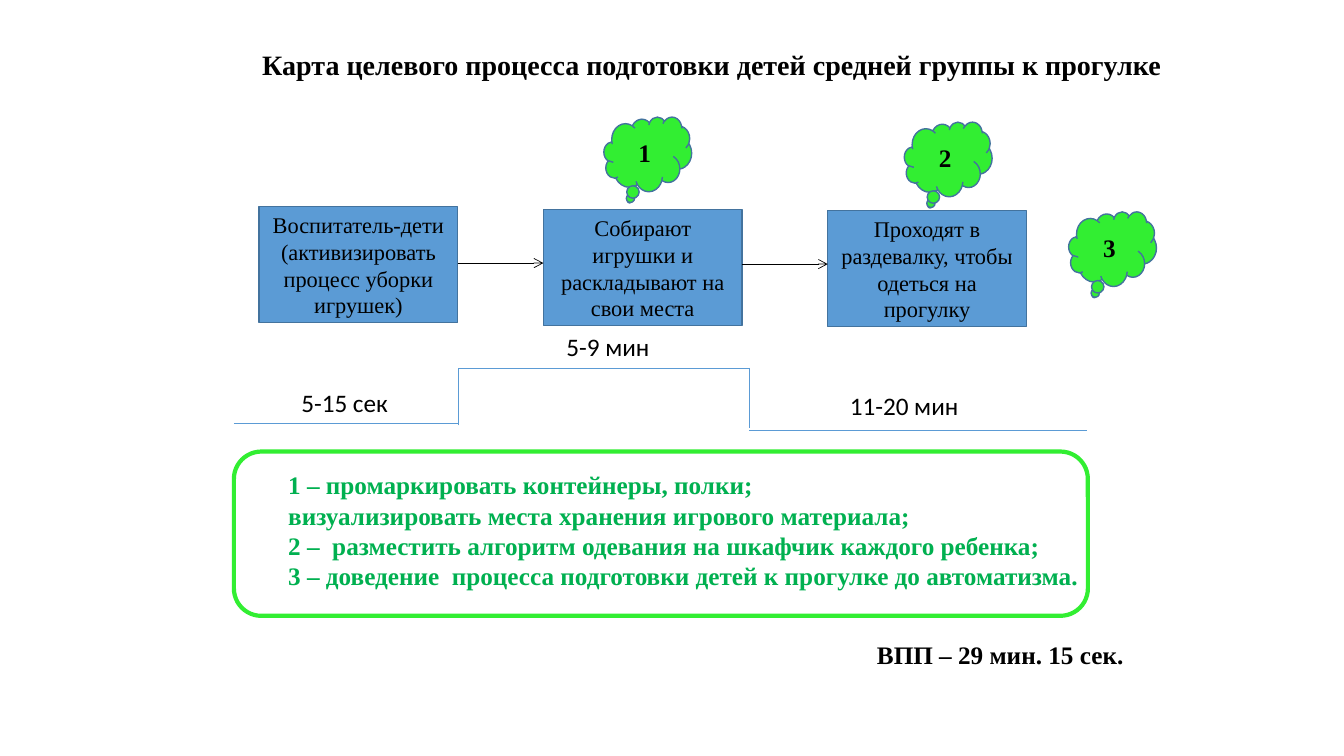
from lxml.etree import SubElement
from pptx import Presentation
from pptx.dml.color import RGBColor
from pptx.enum.shapes import MSO_CONNECTOR, MSO_SHAPE
from pptx.enum.text import MSO_ANCHOR, MSO_AUTO_SIZE, PP_ALIGN
from pptx.oxml.ns import qn
from pptx.util import Inches, Pt

SERIF = "Times New Roman"
BLACK, BLUE, DARK_BLUE = "000000", "5B9BD5", "43739E"
LIME, GREEN = "32EE32", "00B050"


def color(value):
    return RGBColor.from_string(value)


def write(shape, lines, size, font=SERIF, fill=BLACK, bold=False,
          align=PP_ALIGN.LEFT, anchor=MSO_ANCHOR.TOP, wrap=False):
    frame = shape.text_frame
    frame.auto_size = MSO_AUTO_SIZE.NONE
    frame.word_wrap = wrap
    frame.vertical_anchor = anchor
    for index, line in enumerate(lines):
        paragraph = frame.add_paragraph() if index else frame.paragraphs[0]
        paragraph.alignment = align
        run = paragraph.add_run()
        run.text = line
        run.font.name = font
        run.font.size = Pt(size)
        run.font.bold = bold
        run.font.color.rgb = color(fill)


def add_label(slide, box, lines, size=18, **style):
    shape = slide.shapes.add_textbox(*map(Inches, box))
    write(shape, lines, size, **style)


def add_outlined(slide, kind, box, fill, line, width):
    shape = slide.shapes.add_shape(kind, *map(Inches, box))
    shape.shadow.inherit = False
    if fill:
        shape.fill.solid()
        shape.fill.fore_color.rgb = color(fill)
    else:
        shape.fill.background()
    shape.line.color.rgb = color(line)
    shape.line.width = Pt(width)
    return shape


def add_line(slide, start, end, stroke, arrow=False):
    connector = slide.shapes.add_connector(
        MSO_CONNECTOR.STRAIGHT, *map(Inches, (*start, *end)))
    connector.line.color.rgb = color(stroke)
    connector.line.width = Pt(0.5)
    if arrow:
        SubElement(connector.line._get_or_add_ln(), qn("a:tailEnd"), type="arrow")
    SubElement(connector._element.spPr, qn("a:effectLst"))


def add_title(slide, box, text):
    title = slide.shapes.title
    title.left, title.top, title.width, title.height = map(Inches, box)
    write(title, [text], 20, bold=True)


def add_steps(slide, left, top):
    width, height, pitch = 1.97, 1.15, 2.82
    steps = [
        (0, ["Воспитатель-дети", "(активизировать процесс уборки игрушек)"]),
        (0.03, ["Собирают игрушки и раскладывают на свои места"]),
        (0.04, ["Проходят в раздевалку, чтобы одеться на прогулку"]),
    ]
    for index, (drop, lines) in enumerate(steps):
        x = left + index * pitch
        shape = add_outlined(slide, MSO_SHAPE.RECTANGLE,
                             (x, top + drop, width, height), BLUE, DARK_BLUE, 1)
        write(shape, lines, 16, align=PP_ALIGN.CENTER,
              anchor=MSO_ANCHOR.MIDDLE, wrap=True)
        if index:
            y = top + 0.55 + index * 0.01
            add_line(slide, (x - pitch + width, y), (x, y), BLACK, arrow=True)


def add_clouds(slide, positions):
    for number, (left, top) in enumerate(positions, 1):
        cloud = add_outlined(slide, MSO_SHAPE.CLOUD_CALLOUT,
                             (left, top, 0.87, 0.74), LIME, DARK_BLUE, 1)
        write(cloud, [str(number)], 18, bold=True, align=PP_ALIGN.CENTER,
              anchor=MSO_ANCHOR.MIDDLE, wrap=True)


def add_timeline(slide, left, top):
    rise, fall, right = left + 2.23, left + 5.11, left + 8.46
    segments = [
        ((left, top + 0.55), (rise - 0.01, top + 0.55)),
        ((rise, top + 0.57), (rise, top)),
        ((rise, top), (fall, top)),
        ((fall, top), (fall, top + 0.6)),
        ((fall, top + 0.62), (right, top + 0.62)),
    ]
    for start, end in segments:
        add_line(slide, start, end, BLUE)
    durations = [
        (0.57, 0.14, 1.07, "5-15 сек"),
        (3.2, -0.41, 1.03, "5-9 мин"),
        (6.01, 0.17, 1.29, "11-20 мин"),
    ]
    for x, y, width, text in durations:
        add_label(slide, (left + x, top + y, width, 0.4), [text], font="Calibri")


def add_improvements(slide, left, top, width, height):
    add_label(slide, (left + 0.44, top + 0.13, 8.12, 1.31), [
        "1 – промаркировать контейнеры, полки;",
        "визуализировать места хранения игрового материала;",
        "2 –  разместить алгоритм одевания на шкафчик каждого ребенка;",
        "3 – доведение  процесса подготовки детей к прогулке до автоматизма.",
    ], fill=GREEN, bold=True)
    add_outlined(slide, MSO_SHAPE.ROUNDED_RECTANGLE,
                 (left, top, width, height), None, LIME, 3)


def main():
    presentation = Presentation()
    presentation.slide_width = Inches(13.33)
    presentation.slide_height = Inches(7.5)
    slide = presentation.slides.add_slide(presentation.slide_layouts[5])
    add_title(slide, (2.5, 0.42, 9.32, 0.44),
              "Карта целевого процесса подготовки детей средней группы к прогулке")
    add_steps(slide, 2.57, 2.05)
    add_timeline(slide, 2.32, 3.65)
    add_clouds(slide, [(5.99, 1.16), (8.97, 1.21), (10.6, 2.1)])
    add_improvements(slide, 2.32, 4.48, 8.47, 1.63)
    add_label(slide, (8.6, 6.29, 2.67, 0.4), ["ВПП – 29 мин. 15 сек."], bold=True)
    presentation.save("out.pptx")


if __name__ == "__main__":
    main()
